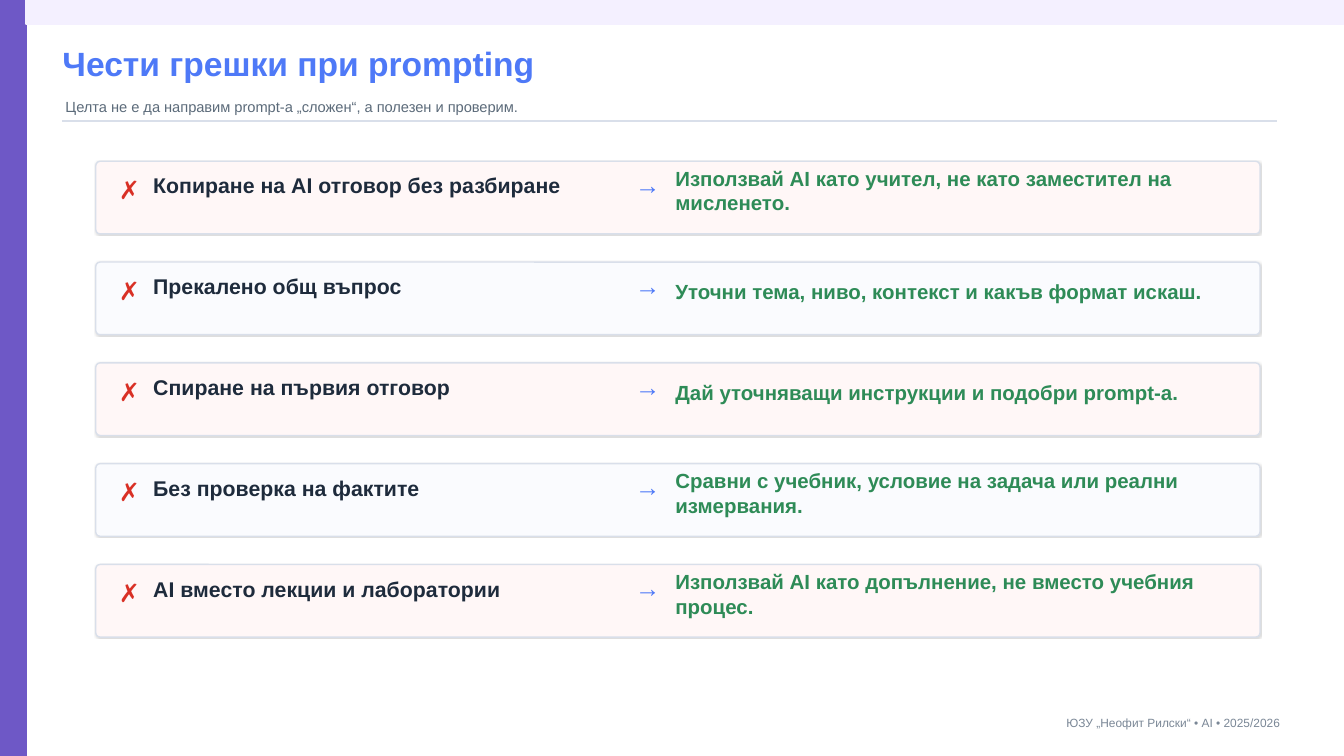
from lxml import etree
from pptx import Presentation
from pptx import util as u
from pptx.dml.color import RGBColor
from pptx.enum import shapes, text
from pptx.oxml import ns

COLORS = {
    "white": "FFFFFF", "purple": "6E58C6", "lilac": "F4F0FF", "blue": "4E79F7",
    "subtitle": "5C6B7A", "footer": "7A8796", "border": "D9DFEA", "pink": "FFF7F7",
    "pale": "FAFBFE", "red": "D93025", "ink": "1E2B3C", "green": "2E8B57", "black": "000000",
}
MISTAKES = [
    ("Копиране на AI отговор без разбиране",
     "Използвай AI като учител, не като заместител на мисленето."),
    ("Прекалено общ въпрос", "Уточни тема, ниво, контекст и какъв формат искаш."),
    ("Спиране на първия отговор", "Дай уточняващи инструкции и подобри prompt-а."),
    ("Без проверка на фактите",
     "Сравни с учебник, условие на задача или реални измервания."),
    ("AI вместо лекции и лаборатории",
     "Използвай AI като допълнение, не вместо учебния процес."),
]
FIRST_ROW, ROW_PITCH = 115.2, 72


def color(name):
    """Return the palette colour of that name."""
    return RGBColor.from_string(COLORS[name])


def add_effects(shape):
    """Append an empty effect list to the shape and return it."""
    return etree.SubElement(shape._element.spPr, ns.qn("a:effectLst"))


def add_text(slide, wording, left, top, width, height, *, size, fill,
             bold=False, align=text.PP_ALIGN.LEFT):
    """Add a wrapped, vertically centred line of text without margins."""
    box = slide.shapes.add_textbox(*map(u.Pt, (left, top, width, height)))
    frame = box.text_frame
    frame.word_wrap = True
    frame.vertical_anchor = text.MSO_ANCHOR.MIDDLE
    frame.margin_left = frame.margin_right = frame.margin_top = frame.margin_bottom = 0
    paragraph = frame.paragraphs[0]
    paragraph.alignment = align
    run = paragraph.add_run()
    run.text = wording
    run.font.name, run.font.size, run.font.bold = "Arial", u.Pt(size), bold
    run.font.color.rgb = color(fill)


def add_panel(slide, left, top, width, height, fill, border=None,
              preset=shapes.MSO_SHAPE.RECTANGLE):
    """Add a filled panel, outlined in its own colour unless a border is given."""
    panel = slide.shapes.add_shape(preset, *map(u.Pt, (left, top, width, height)))
    panel.shadow.inherit = False
    panel.fill.solid()
    panel.fill.fore_color.rgb = color(fill)
    panel.line.color.rgb = color(border or fill)
    panel.line.width = u.Pt(1)
    return panel


def add_card(slide, top, fill):
    """Add a rounded card with a faint shadow."""
    card = add_panel(slide, 68.4, top, 831.6, 51.84, fill, "border",
                     shapes.MSO_SHAPE.ROUNDED_RECTANGLE)
    card.adjustments[0] = 0.06
    effects = card._element.spPr.find(ns.qn("a:effectLst"))
    shadow = etree.SubElement(effects, ns.qn("a:outerShdw"), blurRad=str(u.Pt(0.5)),
                              dist=str(u.Pt(0.2)), dir=str(45 * 60000),
                              algn="bl", rotWithShape="0")
    tint = etree.SubElement(shadow, ns.qn("a:srgbClr"), val=COLORS["black"])
    etree.SubElement(tint, ns.qn("a:alpha"), val="12000")


def add_rule(slide, left, right, y):
    """Add the horizontal rule under the heading."""
    rule = slide.shapes.add_connector(shapes.MSO_CONNECTOR.STRAIGHT,
                                      *map(u.Pt, (left, y, right, y)))
    rule.line.color.rgb = color("border")
    rule.line.width = u.Pt(1.2)
    add_effects(rule)


def add_mistake(slide, top, fill, mistake, advice):
    """Add one card that sets a mistake against its remedy."""
    add_card(slide, top, fill)
    add_text(slide, "✗", 84.96, top + 12.96, 14.4, 14.4, size=18, fill="red", bold=True)
    add_text(slide, mistake, 109.44, top + 10.08, 331.2, 14.4,
             size=15.2, fill="ink", bold=True)
    add_text(slide, "→", 450, top + 9.36, 25.2, 14.4, size=18, fill="blue",
             bold=True, align=text.PP_ALIGN.CENTER)
    add_text(slide, advice, 482.4, top + 10.08, 381.6, 21.6,
             size=14.6, fill="green", bold=True)


def main():
    """Build the slide and save it."""
    deck = Presentation()
    deck.slide_width, deck.slide_height = u.Pt(960), u.Pt(540)
    slide = deck.slides.add_slide(deck.slide_layouts[6])
    add_panel(slide, 0, 0, 960, 540, "white")
    add_panel(slide, 0, 0, 18.72, 540, "purple")
    add_panel(slide, 18.72, 0, 941.28, 17.28, "lilac")
    add_text(slide, "Чести грешки при prompting", 44.64, 27.36, 619.2, 36,
             size=24, fill="blue", bold=True)
    add_text(slide, "Целта не е да направим prompt-а „сложен“, а полезен и проверим.",
             46.8, 66.96, 756, 18, size=10.5, fill="subtitle")
    add_rule(slide, 44.64, 912.24, 86.4)
    add_text(slide, "ЮЗУ „Неофит Рилски“ • AI • 2025/2026", 741.6, 509.76, 172.8, 12.96,
             size=8.5, fill="footer", align=text.PP_ALIGN.RIGHT)
    for row, (mistake, advice) in enumerate(MISTAKES):
        add_mistake(slide, FIRST_ROW + row * ROW_PITCH, ("pink", "pale")[row % 2],
                    mistake, advice)
    deck.save("out.pptx")


if __name__ == "__main__":
    main()
